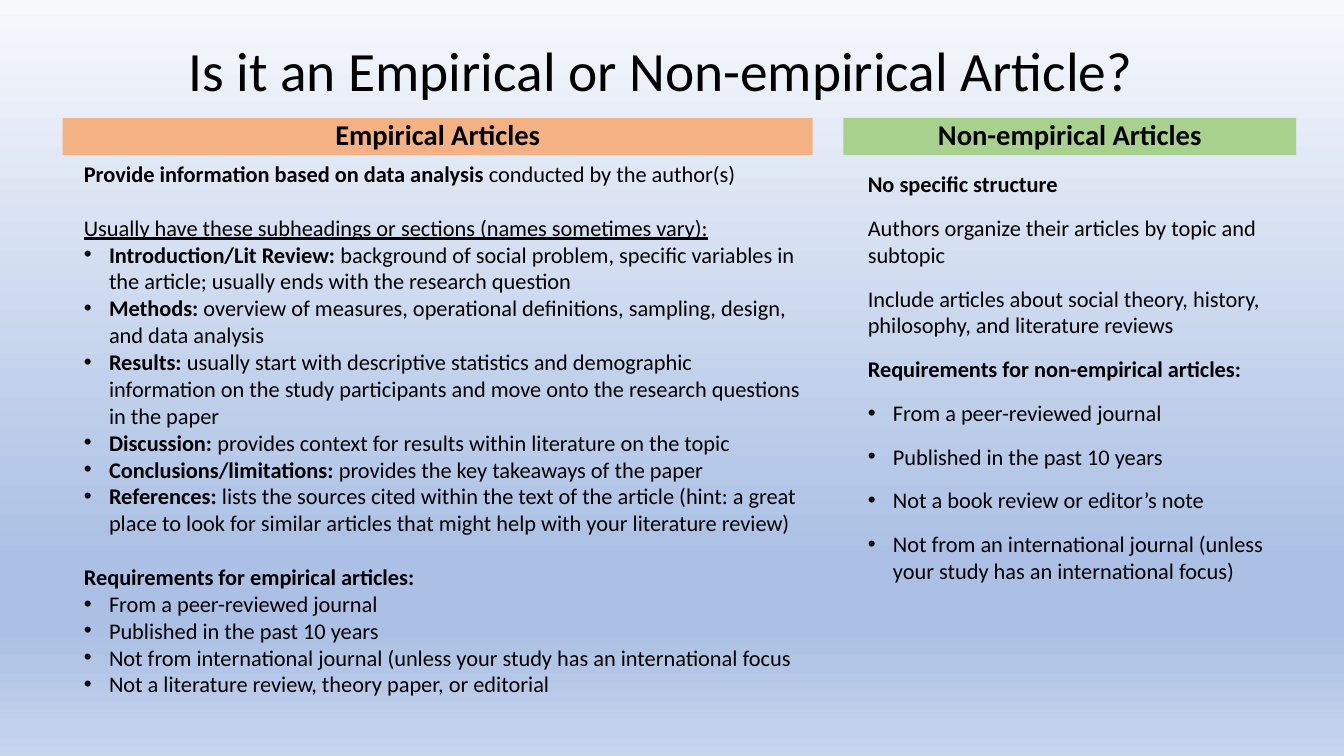
from copy import deepcopy
from lxml import etree
from pptx import Presentation
from pptx import util as u
from pptx.dml.color import RGBColor
from pptx.enum import shapes, text
from pptx.oxml import ns

COLORS = {"text": "000000", "empirical": "F4B183", "non_empirical": "A9D18E"}
SKY = [(0, "F6F8FC"), (74, "ABC0E4"), (83, "ABC0E4"), (100, "C7D5ED")]
FONT = "Calibri"
BODY_SIZE = 16
BLANK_LINE = 19.2


def style(span, size, bold=False, underline=False):
    span.font.name = FONT
    span.font.size = u.Pt(size)
    span.font.bold = bold
    span.font.underline = underline
    span.font.color.rgb = RGBColor.from_string(COLORS["text"])


def add_bullet(para):
    props = para._p.get_or_add_pPr()
    props.set("marL", str(u.Pt(18)))
    props.set("indent", str(-u.Pt(18)))
    etree.SubElement(props, ns.qn("a:buFont")).set("typeface", "Arial")
    etree.SubElement(props, ns.qn("a:buChar")).set("char", "•")


deck = Presentation()
deck.slide_width = u.Pt(960)
deck.slide_height = u.Pt(540)
page = deck.slides.add_slide(deck.slide_layouts[6])

backdrop = page.background.fill
backdrop.gradient()
backdrop.gradient_angle = 270
stop_list = next(page._element.iter(ns.qn("a:gsLst")))
stop_list.append(deepcopy(stop_list[0]))
stop_list.append(deepcopy(stop_list[0]))
for stop, (position, color) in zip(backdrop.gradient_stops, SKY):
    stop.position = position / 100
    stop.color.rgb = RGBColor.from_string(color)

title = page.shapes.add_textbox(u.Pt(127.5), u.Pt(29.5), u.Pt(703), u.Pt(45.4))
title.text_frame.word_wrap = True
title.text_frame.vertical_anchor = text.MSO_ANCHOR.MIDDLE
title.text_frame.text = "Is it an Empirical or Non-empirical Article?"
title.text_frame.paragraphs[0].line_spacing = 0.9
style(title.text_frame.paragraphs[0].runs[0], 39.6)

headers = [
    ("Empirical Articles", "empirical", 44.8, 535.8),
    ("Non-empirical Articles", "non_empirical", 602.5, 323.3),
]
for label, color, left, width in headers:
    header = page.shapes.add_shape(
        shapes.MSO_SHAPE.RECTANGLE, u.Pt(left), u.Pt(84.2), u.Pt(width), u.Pt(26.6))
    header.shadow.inherit = False
    header.fill.solid()
    header.fill.fore_color.rgb = RGBColor.from_string(COLORS[color])
    header.line.fill.background()
    header.text_frame.word_wrap = True
    header.text_frame.vertical_anchor = text.MSO_ANCHOR.BOTTOM
    header.text_frame.text = label
    para = header.text_frame.paragraphs[0]
    para.alignment = text.PP_ALIGN.CENTER
    para.line_spacing = 0.7
    para.space_before = u.Pt(10)
    style(para.runs[0], 20.4, bold=True)

# Each entry: kind, bold lead, regular remainder, blank line above
empirical = [
    ("plain", "Provide information based on data analysis ", "conducted by the author(s)", 0),
    ("underlined", "", "Usually have these subheadings or sections (names sometimes vary):", BLANK_LINE),
    ("bullet", "Introduction/Lit Review:", " background of social problem, specific variables in the article; "
     "usually ends with the research question", 0),
    ("bullet", "Methods:", " overview of measures, operational definitions, sampling, design, and data analysis", 0),
    ("bullet", "Results: ", "usually start with descriptive statistics and demographic information on the "
     "study participants and move onto the research questions in the paper", 0),
    ("bullet", "Discussion: ", "provides context for results within literature on the topic", 0),
    ("bullet", "Conclusions/limitations:", " provides the key takeaways of the paper", 0),
    ("bullet", "References:", " lists the sources cited within the text of the article (hint: a great place "
     "to look for similar articles that might help with your literature review)", 0),
    ("plain", "Requirements for empirical articles:", "", BLANK_LINE),
    ("bullet", "", "From a peer-reviewed journal", 0),
    ("bullet", "", "Published in the past 10 years", 0),
    ("bullet", "", "Not from international journal (unless your study has an international focus", 0),
    ("bullet", "", "Not a literature review, theory paper, or editorial", 0),
]
non_empirical = [
    ("plain", "No specific structure", "", 6),
    ("plain", "", "Authors organize their articles by topic and subtopic", 6),
    ("plain", "", "Include articles about social theory, history, philosophy, and literature reviews", 6),
    ("plain", "Requirements for non-empirical articles:", "", 6),
    ("bullet", "", "From a peer-reviewed journal", 6),
    ("bullet", "", "Published in the past 10 years", 6),
    ("bullet", "", "Not a book review or editor’s note", 6),
    ("bullet", "", "Not from an international journal (unless your study has an international focus)", 6),
]
columns = [
    (empirical, (52.8, 110.8, 527.8, 423.4), 0),
    (non_empirical, (612.8, 118.2, 313, 383), 6),
]
for entries, bounds, gap_after in columns:
    box = page.shapes.add_textbox(*[u.Pt(length) for length in bounds])
    box.text_frame.word_wrap = True
    for index, (kind, lead, rest, gap_before) in enumerate(entries):
        para = box.text_frame.add_paragraph() if index else box.text_frame.paragraphs[0]
        para.space_before = u.Pt(gap_before)
        para.space_after = u.Pt(gap_after)
        if kind == "bullet":
            add_bullet(para)
        for words, bold in ((lead, True), (rest, False)):
            if words:
                span = para.add_run()
                span.text = words
                style(span, BODY_SIZE, bold, kind == "underlined")

deck.save("out.pptx")
